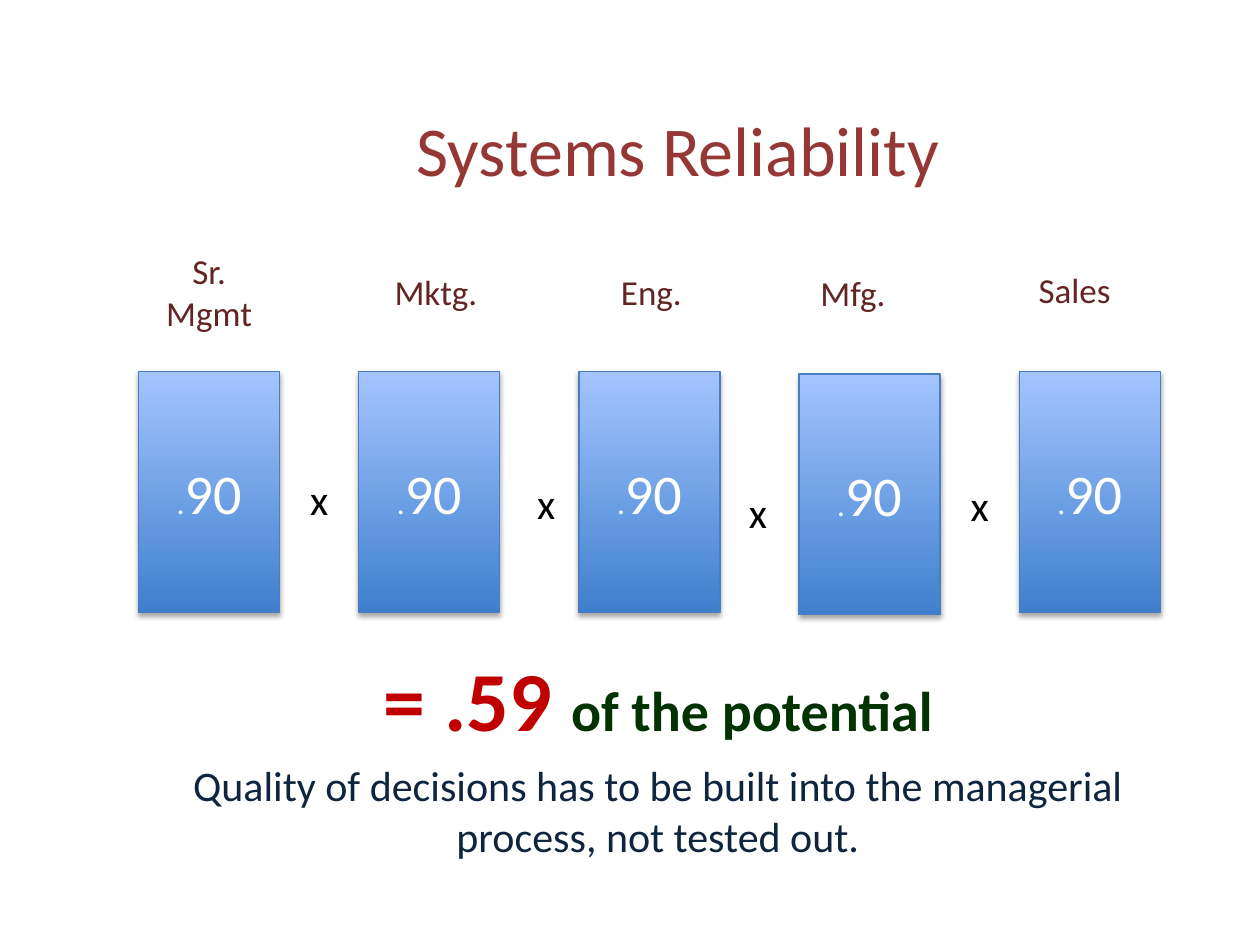
import pptx
import pptx.util
import pptx.dml.color
import pptx.enum.shapes
import pptx.enum.text
import pptx.oxml
import pptx.oxml.ns

Pt = pptx.util.Pt
RGB = pptx.dml.color.RGBColor.from_string
ANCHOR = pptx.enum.text.MSO_ANCHOR


class Theme:
    font = "Calibri"
    title = dict(size=40, color="953735")
    label = dict(size=20, color="632523")
    point = dict(size=18, color="FFFFFF")
    digits = dict(size=32, color="FFFFFF")
    times = dict(size=24, color="000000")
    result = dict(size=48, color="C00000", bold=True)
    result_note = dict(size=32, color="003300", bold=True)
    message = dict(size=24, color="0F243E")
    box_gradient = ("3F80CE", "A4C4FF")
    box_line = "4B7EBC"
    box_shadow = (
        '<a:outerShdw %s blurRad="39370" dist="22860" dir="5400000" rotWithShape="0">'
        '<a:srgbClr val="000000"><a:alpha val="35000"/></a:srgbClr></a:outerShdw>'
        % pptx.oxml.ns.nsdecls("a"))


class Deck:
    """Holds the theme and the current slide; all lengths are points."""

    def __init__(self, theme, width, height):
        self.theme = theme
        self.prs = pptx.Presentation()
        self.prs.slide_width, self.prs.slide_height = Pt(width), Pt(height)
        self.slide = self.prs.slides.add_slide(self.prs.slide_layouts[5])

    def set_text(self, sp, runs, anchor):
        """Fill a shape with one centred paragraph of (text, style) runs."""
        tf = sp.text_frame
        tf.word_wrap = True
        tf.auto_size = pptx.enum.text.MSO_AUTO_SIZE.NONE
        tf.vertical_anchor = anchor
        p = tf.paragraphs[0]
        p.alignment = pptx.enum.text.PP_ALIGN.CENTER
        for text, style in runs:
            r = p.add_run()
            r.text = text
            formats = dict(name=self.theme.font, size=Pt(style["size"]),
                           bold=style.get("bold", False))
            for name, value in formats.items():
                setattr(r.font, name, value)
            r.font.color.rgb = RGB(style["color"])

    def title(self, text, left, top, width, height):
        sp = self.slide.shapes.title
        place = dict(left=left, top=top, width=width, height=height)
        for name, value in place.items():
            setattr(sp, name, Pt(value))
        self.set_text(sp, [(text, self.theme.title)], ANCHOR.MIDDLE)

    def text(self, runs, left, top, width, height, anchor=ANCHOR.TOP):
        sp = self.slide.shapes.add_textbox(*map(Pt, (left, top, width, height)))
        self.set_text(sp, runs, anchor)

    def box(self, runs, left, top, width, height):
        sp = self.slide.shapes.add_shape(
            pptx.enum.shapes.MSO_SHAPE.RECTANGLE, *map(Pt, (left, top, width, height)))
        sp.fill.gradient()
        sp.fill.gradient_angle = 90
        for i, color in enumerate(self.theme.box_gradient):
            stop = sp.fill.gradient_stops[i]
            stop.position, stop.color.rgb = i, RGB(color)
        sp.line.color.rgb = RGB(self.theme.box_line)
        sp.line.width = Pt(0.75)
        sp.shadow.inherit = False
        effects = sp._element.spPr.find(pptx.oxml.ns.qn("a:effectLst"))
        effects.append(pptx.oxml.parse_xml(self.theme.box_shadow))
        self.set_text(sp, runs, ANCHOR.MIDDLE)


def main():
    theme = Theme()
    deck = Deck(theme, 720, 540)
    deck.title("Systems Reliability", 63.4, 39.6, 648, 90)

    box_left, box_pitch, box_width, box_height = 79.2, 125.8, 80.6, 137.5
    # label, label left, label top, box top
    stages = [
        ("Sr. Mgmt", 79.2, 121.7, 212.4),
        ("Mktg.", 208.8, 121.7, 212.4),
        ("Eng.", 331.9, 121.7, 212.4),
        ("Mfg.", 447.1, 122.4, 213.8),
        ("Sales", 573.8, 120.2, 212.4),
    ]
    for i, (label, label_left, label_top, box_top) in enumerate(stages):
        deck.box([(".", theme.point), ("90", theme.digits)],
                 box_left + i * box_pitch, box_top, box_width, box_height)
        deck.text([(label, theme.label)], label_left, label_top,
                  box_width, 90, ANCHOR.MIDDLE)

    for left, top in [(159.8, 267.1), (289.4, 269.3), (410.4, 274.3), (537.1, 270.7)]:
        deck.text([("x", theme.times)], left, top, 45.4, 36.7)

    deck.text([("= .59 ", theme.result), ("of the potential", theme.result_note)],
              129.6, 366.5, 493.2, 65.5)
    deck.text([("Quality of decisions has to be built into the managerial process, "
                "not tested out.", theme.message)], 88.6, 430.6, 574.6, 65.5)
    deck.prs.save("out.pptx")


if __name__ == "__main__":
    main()
